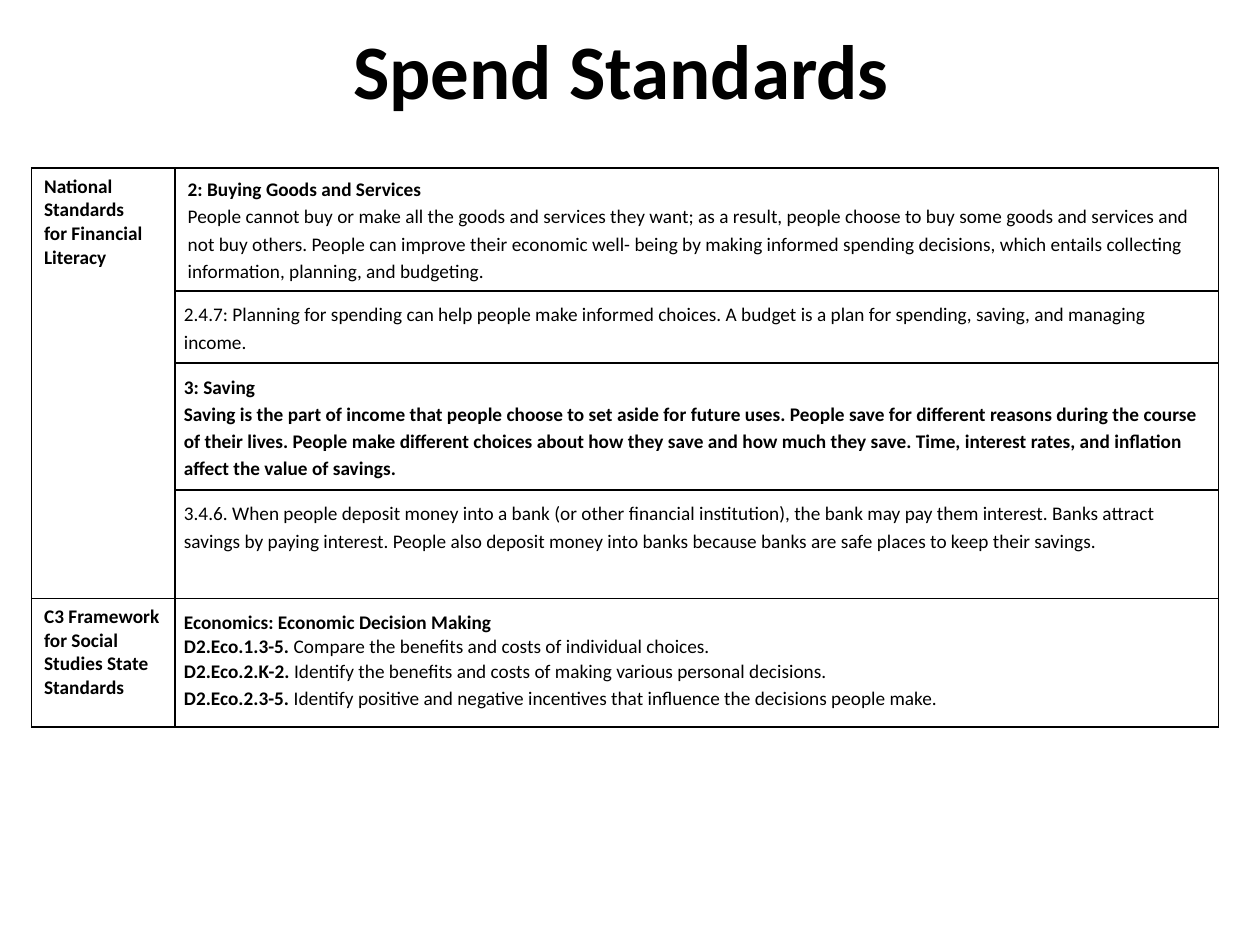
from lxml.etree import SubElement
from pptx import Presentation
from pptx.dml.color import RGBColor
from pptx.enum.text import MSO_ANCHOR, PP_ALIGN
from pptx.oxml.ns import qn
from pptx.util import Inches, Pt

BLACK = RGBColor(0, 0, 0)
WHITE = RGBColor(255, 255, 255)

# A line is (spacing, bold text, plain text).
AREAS = [
    [(1, "National Standards", ""), (1, "for Financial Literacy", "")],
    [(1, "C3 Framework for Social Studies State Standards", "")],
]
GOALS = [
    [(1.15, "2: Buying Goods and Services", ""),
     (1.15, "", "People cannot buy or make all the goods and services they want; "
      "as a result, people choose to buy some goods and services and not buy others. "
      "People can improve their economic well- being by making informed spending "
      "decisions, which entails collecting information, planning, and budgeting.")],
    [(1.15, "", "2.4.7: Planning for spending can help people make informed choices. "
      "A budget is a plan for spending, saving, and managing income.")],
    [(1.15, "3: Saving", ""),
     (1.15, "Saving is the part of income that people choose to set aside for future "
      "uses. People save for different reasons during the course of their lives. "
      "People make different choices about how they save and how much they save. "
      "Time, interest rates, and inflation affect the value of savings.", "")],
    [(1.15, "", "3.4.6. When people deposit money into a bank (or other financial "
      "institution), the bank may pay them interest. Banks attract savings by paying "
      "interest. People also deposit money into banks because banks are safe places "
      "to keep their savings.")],
    [(1.15, "Economics: Economic Decision Making", ""),
     (Pt(14), "D2.Eco.1.3-5. ", "Compare the benefits and costs of individual choices."),
     (Pt(14), "D2.Eco.2.K-2. ",
      "Identify the benefits and costs of making various personal decisions."),
     (1.15, "D2.Eco.2.3-5. ",
      "Identify positive and negative incentives that influence the decisions people make.")],
]
COLS = [11.4, 82.8]
ROWS = [13, 7.6, 13.3, 11.5, 13.6]


class Deck:
    """Style and current slide; lengths are percent of the slide's size."""
    face = "Calibri"

    def __init__(self):
        self.prs = Presentation()
        self.prs.slide_width, self.prs.slide_height = Inches(10), Inches(7.5)
        self.slide = self.prs.slides.add_slide(self.prs.slide_layouts[5])

    def wide(self, share):
        return round(self.prs.slide_width * share / 100)

    def high(self, share):
        return round(self.prs.slide_height * share / 100)

    def style(self, font, size):
        font.name, font.size, font.color.rgb = self.face, Pt(size), BLACK

    def title(self, text, x, y, w, h):
        box = self.slide.shapes.title
        box.left, box.top = self.wide(x), self.high(y)
        box.width, box.height = self.wide(w), self.high(h)
        box.text_frame.vertical_anchor = MSO_ANCHOR.MIDDLE
        par = box.text_frame.paragraphs[0]
        par.text, par.alignment = text, PP_ALIGN.CENTER
        self.style(par.font, 44)
        par.font.bold = True

    def table(self, x, y, cols, rows):
        grid = self.slide.shapes.add_table(
            len(rows), len(cols), self.wide(x), self.high(y),
            self.wide(sum(cols)), self.high(sum(rows))).table
        grid.first_row = grid.horz_banding = False
        for col, share in zip(grid.columns, cols):
            col.width = self.wide(share)
        for row, share in zip(grid.rows, rows):
            row.height = self.high(share)
        for cell in grid.iter_cells():
            self.border(cell)
            cell.fill.solid()
            cell.fill.fore_color.rgb = WHITE
        return grid

    def border(self, cell):
        props = cell._tc.get_or_add_tcPr()
        for side in ("a:lnL", "a:lnR", "a:lnT", "a:lnB"):
            line = SubElement(props, qn(side), w=str(Pt(1)))
            fill = SubElement(line, qn("a:solidFill"))
            SubElement(fill, qn("a:srgbClr"), val=str(BLACK))

    def text(self, cell, lines, inset=None):
        if inset:
            cell.margin_left = cell.margin_right = inset
            cell.margin_top = cell.margin_bottom = inset
        frame = cell.text_frame
        for i, (space, strong, plain) in enumerate(lines):
            par = frame.add_paragraph() if i else frame.paragraphs[0]
            par.line_spacing = space
            self.style(par.font, 11)
            for words, bold in ((strong, True), (plain, False)):
                if words:
                    run = par.add_run()
                    run.text = words
                    self.style(run.font, 11)
                    run.font.bold = bold


def main():
    deck = Deck()
    deck.title("Spend Standards ", 0, -1.07, 100, 16.67)
    grid = deck.table(2.5, 17.8, COLS, ROWS)
    grid.cell(0, 0).merge(grid.cell(3, 0))
    for row, lines in zip((0, 4), AREAS):
        deck.text(grid.cell(row, 0), lines)
    for row, lines in enumerate(GOALS):
        deck.text(grid.cell(row, 1), lines, Inches(0.07) if row else None)
    deck.prs.save("out.pptx")


if __name__ == "__main__":
    main()
